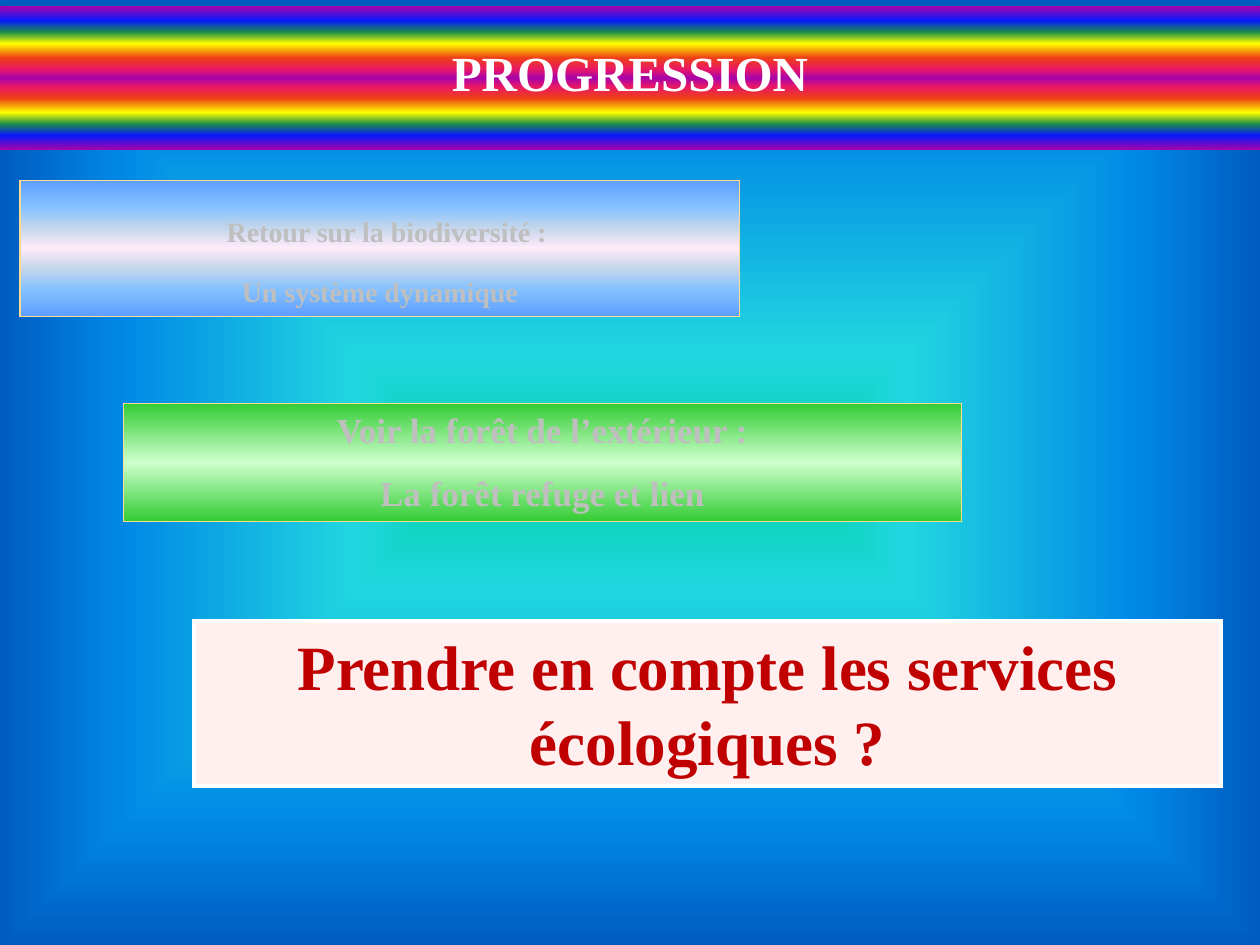
from dataclasses import dataclass

from lxml.etree import SubElement
from pptx import Presentation
from pptx.dml.color import RGBColor
from pptx.enum.shapes import MSO_SHAPE
from pptx.enum.text import MSO_ANCHOR, PP_ALIGN
from pptx.oxml.ns import qn
from pptx.util import Inches, Pt

FONT_NAME = "Times New Roman"
Stops = list[tuple[int, str]]

BACKGROUND: Stops = [(0, "03D4A8"), (25, "21D6E0"), (75, "0087E6"), (100, "005CBF")]


def mirrored(half: Stops) -> Stops:
    """Extend stops that run from 0 to 50 symmetrically up to 100."""
    return half + [(100 - position, color) for position, color in half[-2::-1]]


RAINBOW = mirrored([(0, "A603AB"), (10, "0819FB"), (18, "1A8D48"), (26, "FFFF00"),
                    (36, "EE3F17"), (44, "E81766"), (50, "A603AB")])
BLUE_PINK = mirrored([(0, "5E9EFF"), (20, "85C2FF"), (35, "C4D6EB"), (50, "FFEBFA")])
GREEN = mirrored([(0, "33CC33"), (50, "CCFFCC")])


@dataclass
class Banner:
    lines: list[str]
    left: float
    top: float
    width: float
    height: float
    fill: str | Stops
    text_color: str
    text_size: int
    line_color: str | None = None
    line_width: float = 0.75
    top_inset: float = 0.05
    space_after: int = 6
    first_indent: float = 0


BANNERS = [
    Banner(["Retour sur la biodiversité :", "Un système dynamique"],
           0.16, 1.43, 5.71, 1.08, BLUE_PINK, "BFBFBF", 16, "FFDA91",
           top_inset=0.27, space_after=9, first_indent=0.11),
    Banner(["Voir la forêt de l’extérieur :", "La forêt refuge et lien"],
           0.98, 3.2, 6.65, 0.94, GREEN, "BFBFBF", 20, "FFDA91", top_inset=0.04),
    Banner(["PROGRESSION"], 0, 0.05, 10, 1.14, RAINBOW, "FFFFFF", 28,
           top_inset=0.29),
    Banner(["Prendre en compte les services écologiques ?"],
           1.54, 4.93, 8.15, 1.31, "FFEFEF", "C00000", 36, "FFFFFF", 2.25),
]


def rgb(color: str) -> RGBColor:
    return RGBColor.from_string(color)


def apply_gradient(fill, owner, stops: Stops, from_center: bool = False) -> None:
    """Give the fill inside the owner element vertical or centred gradient stops."""
    fill.gradient()
    gradient = next(owner.iter(qn("a:gradFill")))
    for child in list(gradient):
        gradient.remove(child)
    stop_list = SubElement(gradient, qn("a:gsLst"))
    for position, color in stops:
        stop = SubElement(stop_list, qn("a:gs"), pos=str(position * 1000))
        SubElement(stop, qn("a:srgbClr"), val=color)
    if from_center:
        direction = SubElement(gradient, qn("a:path"), path="shape")
        SubElement(direction, qn("a:fillToRect"), l="50000", t="50000",
                   r="50000", b="50000")
    else:
        SubElement(gradient, qn("a:lin"), ang="5400000", scaled="1")


def apply_outline(shape, banner: Banner) -> None:
    """Draw a square-cornered outline, or none when no colour is given."""
    if banner.line_color is None:
        shape.line.fill.background()
        return
    shape.line.color.rgb = rgb(banner.line_color)
    shape.line.width = Pt(banner.line_width)
    outline = shape.element.spPr.find(qn("a:ln"))
    SubElement(outline, qn("a:miter"), lim="800000")


def write_text(shape, banner: Banner) -> None:
    frame = shape.text_frame
    frame.text = "\n".join(banner.lines)
    frame.word_wrap = True
    frame.vertical_anchor = MSO_ANCHOR.TOP
    frame.margin_top = Inches(banner.top_inset)
    for index, paragraph in enumerate(frame.paragraphs):
        paragraph.alignment = PP_ALIGN.CENTER
        if index > 0:
            paragraph.space_before = Pt(6)
        elif banner.first_indent:
            properties = paragraph._p.get_or_add_pPr()
            properties.set("marL", str(Inches(banner.first_indent)))
        if index < len(banner.lines) - 1:
            paragraph.space_after = Pt(banner.space_after)
        for run in paragraph.runs:
            run.font.name = FONT_NAME
            run.font.size = Pt(banner.text_size)
            run.font.bold = True
            run.font.color.rgb = rgb(banner.text_color)


def draw_banner(slide, banner: Banner) -> None:
    shape = slide.shapes.add_shape(
        MSO_SHAPE.RECTANGLE, Inches(banner.left), Inches(banner.top),
        Inches(banner.width), Inches(banner.height))
    shape.shadow.inherit = False
    if isinstance(banner.fill, str):
        shape.fill.solid()
        shape.fill.fore_color.rgb = rgb(banner.fill)
    else:
        apply_gradient(shape.fill, shape.element.spPr, banner.fill)
    apply_outline(shape, banner)
    write_text(shape, banner)


def main() -> None:
    presentation = Presentation()
    presentation.slide_width = Inches(10)
    presentation.slide_height = Inches(7.5)
    slide = presentation.slides.add_slide(presentation.slide_layouts[6])
    apply_gradient(slide.background.fill, slide.element, BACKGROUND, from_center=True)
    for banner in BANNERS:
        draw_banner(slide, banner)
    presentation.save("out.pptx")


if __name__ == "__main__":
    main()
